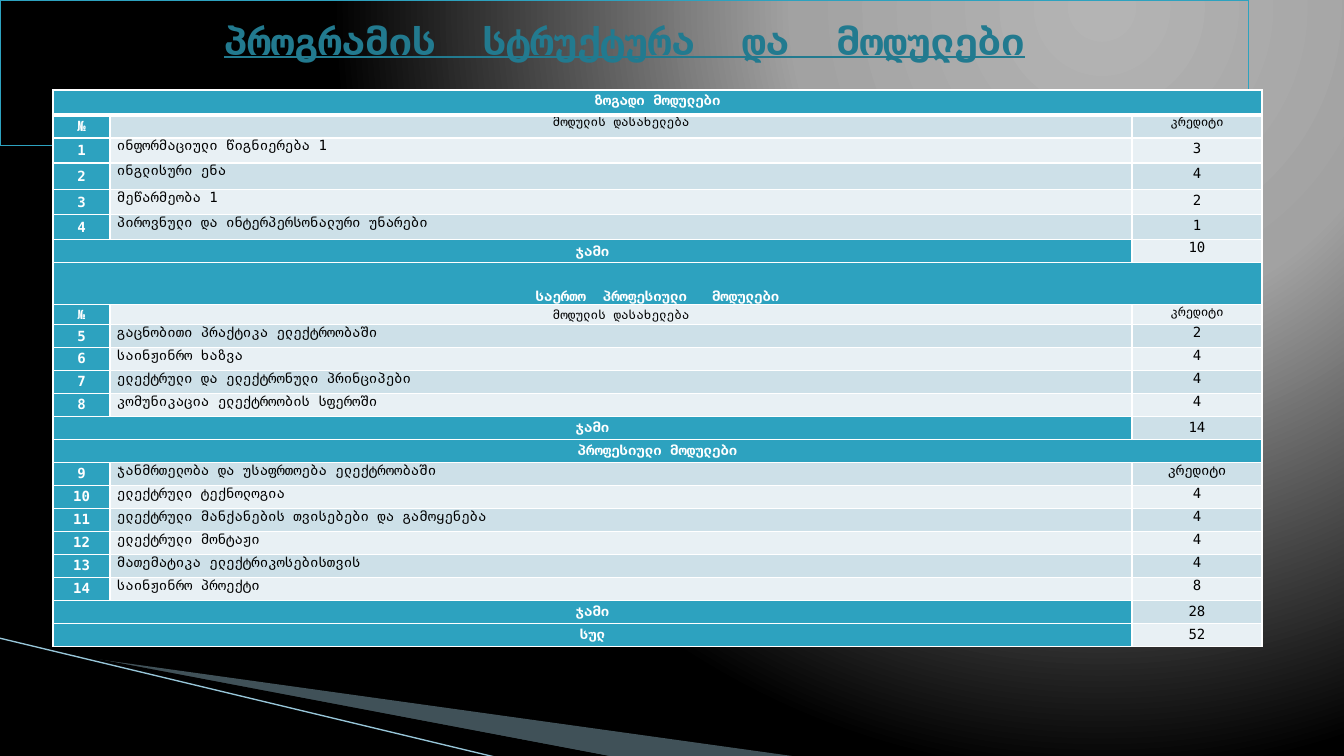
"""Build the slide that lists the programme's modules and credits."""
from pptx import Presentation
from pptx.dml.color import RGBColor
from pptx.enum.shapes import MSO_CONNECTOR
from pptx.enum.text import MSO_ANCHOR, MSO_AUTO_SIZE, PP_ALIGN
from pptx.oxml import parse_xml
from pptx.oxml.ns import nsdecls
from pptx.util import Pt

PX = 914400 / 100.8
THEME = {
    "font": "DejaVu Sans Mono",
    "teal": "2DA2BF", "title": "227A8F", "line": "97C5D8", "wedge": "A0CBDC",
    "white": "FFFFFF", "black": "000000", "bands": ("E8F0F4", "CDE0E8"),
    "glow": ((0, "B4B4B4"), (40, "A2A2A2"), (100, "000000")),
    "big": 28, "body": 10, "small": 9,
}
ROWS = [
    ("ზოგადი მოდულები",),
    ("№", "მოდულის დასახელება", "კრედიტი"),
    ("1", "ინფორმაციული წიგნიერება 1", "3"),
    ("2", "ინგლისური ენა", "4"),
    ("3", "მეწარმეობა 1", "2"),
    ("4", "პიროვნული და ინტერპერსონალური უნარები", "1"),
    ("ჯამი", "10"),
    ("საერთო  პროფესიული   მოდულები",),
    ("№", "მოდულის დასახელება", "კრედიტი"),
    ("5", "გაცნობითი პრაქტიკა ელექტროობაში", "2"),
    ("6", "საინჟინრო ხაზვა", "4"),
    ("7", "ელექტრული და ელექტრონული პრინციპები", "4"),
    ("8", "კომუნიკაცია ელექტროობის სფეროში", "4"),
    ("ჯამი", "14"),
    ("პროფესიული მოდულები",),
    ("9", "ჯანმრთელობა და უსაფრთოება ელექტროობაში", "კრედიტი"),
    ("10", "ელექტრული ტექნოლოგია", "4"),
    ("11", "ელექტრული მანქანების თვისებები და გამოყენება", "4"),
    ("12", "ელექტრული მონტაჟი", "4"),
    ("13", "მათემატიკა ელექტრიკოსებისთვის", "4"),
    ("14", "საინჟინრო პროექტი", "8"),
    ("ჯამი", "28"),
    ("სულ", "52"),
]
HIGHS = [25, 23, 25, 27, 25, 25, 23, 42, 20] + [23] * 14
WIDES = [57, 1022, 130]
HEADS = (1, 8)
FIRST = range(2, 6)


def px(*nums):
    """Turn pixels into EMU."""
    return [round(n * PX) for n in nums]


def write(frame, text, size, color, para, **font):
    """Put one styled paragraph into a text frame."""
    frame.text = text
    line = frame.paragraphs[0]
    for key, val in para.items():
        setattr(line, key, val)
    face = line.runs[0].font
    face.color.rgb = RGBColor.from_string(color)
    for key, val in {"name": THEME["font"], "size": Pt(size), **font}.items():
        setattr(face, key, val)


deck = Presentation()
deck.slide_width, deck.slide_height = px(1344, 756)
slide = deck.slides.add_slide(deck.slide_layouts[5])
shapes = slide.shapes

slide.background.fill.gradient()
grad = slide.element.xpath(".//a:gradFill")[0]
stops = "".join(
    f'<a:gs pos="{pos * 1000}"><a:srgbClr val="{color}"/></a:gs>' for pos, color in THEME["glow"]
)
grad.getparent().replace(grad, parse_xml(
    f'<a:gradFill {nsdecls("a")} rotWithShape="1"><a:gsLst>{stops}</a:gsLst>'
    '<a:path path="circle"><a:fillToRect l="65000" b="98000"/></a:path></a:gradFill>'
))

wedges = [
    (THEME["wedge"], 40, [(74, 656), (799, 757), (613, 757), (74, 655)]),
    (THEME["black"], 100, [(72, 654), (614, 757), (500, 758), (73, 655)]),
]
for color, alpha, dots in wedges:
    path = shapes.build_freeform(*px(*dots[0]), scale=1)
    path.add_line_segments([px(*dot) for dot in dots[1:]], close=True)
    wedge = path.convert_to_shape()
    wedge.shadow.inherit = False
    wedge.line.fill.background()
    wedge.fill.solid()
    wedge.fill.fore_color.rgb = RGBColor.from_string(color)
    tint = wedge.element.spPr.xpath("./a:solidFill/a:srgbClr")[0]
    tint.append(parse_xml(f'<a:alpha {nsdecls("a")} val="{alpha * 1000}"/>'))

edge = shapes.add_connector(MSO_CONNECTOR.STRAIGHT, *px(-1, 638, 499, 758))
edge.line.color.rgb = RGBColor.from_string(THEME["line"])
edge.line.width = Pt(0.95)
edge.element.spPr.append(parse_xml(f'<a:effectLst {nsdecls("a")}/>'))

title = shapes.title
title.left, title.top, title.width, title.height = px(0, 0, 1249, 146)
title.line.color.rgb = RGBColor.from_string(THEME["teal"])
title.line.width = Pt(0.75)
write(title.text_frame, "პროგრამის  სტრუქტურა  და  მოდულები", THEME["big"], THEME["title"],
      {"alignment": PP_ALIGN.CENTER}, bold=True, underline=True)
frame = {"vertical_anchor": MSO_ANCHOR.BOTTOM, "auto_size": MSO_AUTO_SIZE.NONE,
         "word_wrap": True, "margin_bottom": px(83)[0]}
for key, val in frame.items():
    setattr(title.text_frame, key, val)
title.element.getparent().append(title.element)

table = shapes.add_table(len(ROWS), 3, *px(53, 90, sum(WIDES), sum(HIGHS))).table
table.first_row = table.horz_banding = False
for col, wide in zip(table.columns, WIDES):
    col.width = px(wide)[0]

for r, (row, high) in enumerate(zip(ROWS, HIGHS)):
    table.rows[r].height = px(high)[0]
    span = 4 - len(row)
    if span > 1:
        table.cell(r, 0).merge(table.cell(r, span - 1))
    for c in range(3):
        cell = table.cell(r, c)
        lead = c < span
        cell.fill.solid()
        cell.fill.fore_color.rgb = RGBColor.from_string(
            THEME["teal"] if lead else THEME["bands"][r % 2])
        for i, side in enumerate("LRTB"):
            thick = 3 if (r, side) in ((0, "B"), (1, "T")) else 1
            cell.fill._xPr.insert(i, parse_xml(
                f'<a:ln{side} {nsdecls("a")} w="{thick * 12700}"><a:solidFill>'
                f'<a:srgbClr val="{THEME["white"]}"/></a:solidFill></a:ln{side}>'))
        if cell.is_spanned:
            continue
        named = c == 1
        middle = (lead and r) or (named and r == 8) or (span == 2 and r > 6)
        anchor = MSO_ANCHOR.MIDDLE if middle else MSO_ANCHOR.TOP
        form = {"margin_left": px(7)[0], "margin_right": px(7)[0], "margin_top": 0,
                "margin_bottom": 0, "vertical_anchor": MSO_ANCHOR.BOTTOM if r == 7 else anchor}
        for key, val in form.items():
            setattr(cell, key, val)
        para = {"alignment": PP_ALIGN.CENTER}
        if named and r not in HEADS:
            para["alignment"] = PP_ALIGN.JUSTIFY if r in FIRST else PP_ALIGN.LEFT
        if r in (0, 7) or (c == 2 and r in FIRST):
            para["line_spacing"] = 1.15
        small = r == 8 or (r == 1 and not lead)
        write(cell.text_frame, row[max(0, c - span + 1)], THEME["small" if small else "body"],
              THEME["white" if lead else "black"], para, bold=lead)

deck.save("out.pptx")
